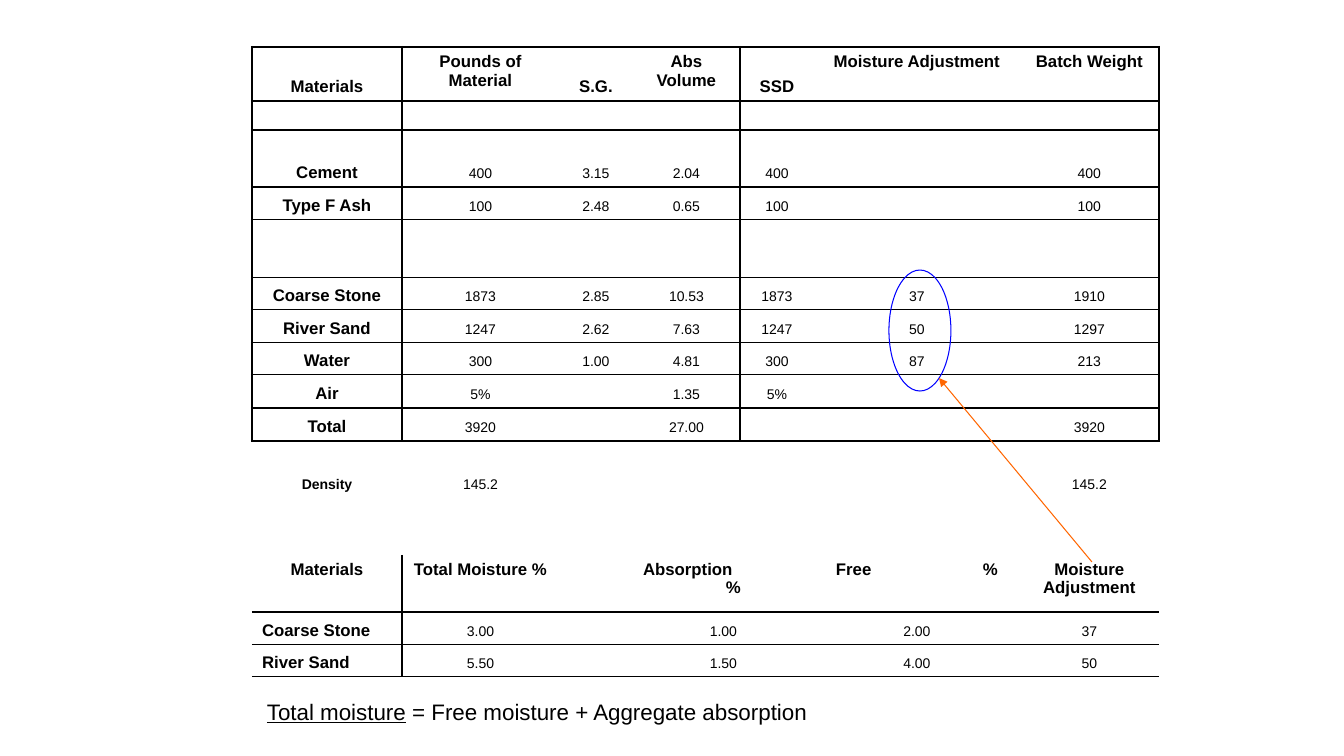
import pptx
import pptx.dml.color
import pptx.enum.shapes
import pptx.enum.text
import pptx.oxml.ns
import pptx.util
from lxml import etree

ROWS = [  # height in px, then the seven cells
    (54, ["Materials", "Pounds of Material", "S.G.", "Abs Volume", "SSD",
          "Moisture Adjustment", "Batch Weight"]),
    (29, [""] * 7),
    (57, ["Cement", "400", "3.15", "2.04", "400", "", "400"]),
    (33, ["Type F Ash", "100", "2.48", "0.65", "100", "", "100"]),
    (58, [""] * 7),
    (32, ["Coarse Stone", "1873", "2.85", "10.53", "1873", "37", "1910"]),
    (33, ["River Sand", "1247", "2.62", "7.63", "1247", "50", "1297"]),
    (32, ["Water", "300", "1.00", "4.81", "300", "87", "213"]),
    (33, ["Air", "5%", "", "1.35", "5%", "", ""]),
    (33, ["Total", "3920", "", "27.00", "", "", "3920"]),
    (57, ["Density", "145.2", "", "", "", "", "145.2"]),
    (57, [""] * 7),
    (57, ["Materials", "Total Moisture %", "", "Absorption\n\t%", "", "\tFree\t%",
          "Moisture Adjustment"]),
    (33, ["Coarse Stone", "3.00", "", "1.00", "", "2.00", "37"]),
    (32, ["River Sand", "5.50", "", "1.50", "", "4.00", "50"]),
]
COLUMN_WIDTHS = [150, 157, 74, 107, 74, 206, 139]
TABLE_LEFT, TABLE_TOP = 252, 47
BATCH_HEADER, TOTAL, DENSITY, MOISTURE_HEADER = 0, 9, 10, 12
TOP_ALIGNED_BATCH_HEADERS = {1, 3, 5, 6}
TAB_STOPS = {3: [83], 5: [12, 159]}  # column of the moisture header: px

# Line weights in points at each row boundary, top to bottom
ROW_RULES = [2, 2, 1, 1, 1, 1, 1, 1, 1, 2, 2, 0, 0, 2, 1, 1]
BATCH_COLUMN_RULES = {0, 1, 4, 7}
MOISTURE_COLUMN_RULES = {1}
COLUMN_RULE = 2

FORMULA = [("Total moisture", True), (" = Free moisture + Aggregate absorption", False)]
FORMULA_BOX = (257, 693, 789, 37)
ADJUSTMENT_RING = (889, 270, 62, 121)
ARROW = (1092, 562, 939, 378)

BLACK = pptx.dml.color.RGBColor(0, 0, 0)
BLUE = pptx.dml.color.RGBColor(0, 0, 255)
ORANGE = pptx.dml.color.RGBColor(255, 102, 0)
FONT = "Arial"
PX_PER_INCH = 100.8
qn = pptx.oxml.ns.qn


def px(length):
    return pptx.util.Emu(round(length * 914400 / PX_PER_INCH))


def add_run(paragraph, text, size, bold=False, underline=False):
    run = paragraph.add_run()
    run.text = text
    font = run.font
    font.name, font.size, font.bold = FONT, pptx.util.Pt(size), bold
    font.underline = underline
    font.color.rgb = BLACK


def column_rule(row, boundary):
    if row <= TOTAL:
        ruled = BATCH_COLUMN_RULES
    elif row >= MOISTURE_HEADER:
        ruled = MOISTURE_COLUMN_RULES
    else:
        ruled = set()
    return COLUMN_RULE if boundary in ruled else 0


def set_borders(cell, row, col):
    properties = cell._tc.get_or_add_tcPr()
    weights = {"a:lnL": column_rule(row, col), "a:lnR": column_rule(row, col + 1),
               "a:lnT": ROW_RULES[row], "a:lnB": ROW_RULES[row + 1]}
    for tag, weight in weights.items():
        line = etree.SubElement(properties, qn(tag), w=str(pptx.util.Pt(weight)))
        if weight:
            fill = etree.SubElement(line, qn("a:solidFill"))
            etree.SubElement(fill, qn("a:srgbClr"), val=str(BLACK))
        else:
            etree.SubElement(line, qn("a:noFill"))
    cell.fill.background()


def fill_cell(cell, row, col, text):
    align = pptx.enum.text.PP_ALIGN
    anchor = pptx.enum.text.MSO_ANCHOR
    header = row in (BATCH_HEADER, MOISTURE_HEADER)
    at_top = row == MOISTURE_HEADER or (
        row == BATCH_HEADER and col in TOP_ALIGNED_BATCH_HEADERS)
    cell.vertical_anchor = anchor.TOP if at_top else anchor.BOTTOM
    paragraph = cell.text_frame.paragraphs[0]
    if not text:
        etree.SubElement(paragraph._p, qn("a:endParaRPr"), sz="1000")
        return
    stops = TAB_STOPS.get(col, []) if row == MOISTURE_HEADER else []
    aligned_left = stops or (row > MOISTURE_HEADER and col == 0)
    paragraph.alignment = align.LEFT if aligned_left else align.CENTER
    if stops:
        tabs = etree.SubElement(paragraph._p.get_or_add_pPr(), qn("a:tabLst"))
        for stop in stops:
            etree.SubElement(tabs, qn("a:tab"), pos=str(px(stop)), algn="l")
    bold = header or col == 0
    size = 12 if bold and row != DENSITY else 10
    for index, line in enumerate(text.split("\n")):
        if index:
            paragraph.add_line_break()
        add_run(paragraph, line, size, bold)


def add_mix_table(slide):
    frame = slide.shapes.add_table(
        len(ROWS), len(COLUMN_WIDTHS), px(TABLE_LEFT), px(TABLE_TOP),
        px(sum(COLUMN_WIDTHS)), px(sum(height for height, _ in ROWS)))
    table = frame.table
    table.first_row = table.horz_banding = False
    for column, width in zip(table.columns, COLUMN_WIDTHS):
        column.width = px(width)
    for row, (height, texts) in enumerate(ROWS):
        table.rows[row].height = px(height)
        for col, text in enumerate(texts):
            cell = table.cell(row, col)
            fill_cell(cell, row, col, text)
            set_borders(cell, row, col)
        if row >= MOISTURE_HEADER:
            table.cell(row, 3).merge(table.cell(row, 4))


def add_formula(slide):
    frame = slide.shapes.add_textbox(*map(px, FORMULA_BOX)).text_frame
    frame.word_wrap = True
    frame.auto_size = pptx.enum.text.MSO_AUTO_SIZE.SHAPE_TO_FIT_TEXT
    for text, underline in FORMULA:
        add_run(frame.paragraphs[0], text, 16, underline=underline)


def add_adjustment_callout(slide):
    """Ring the moisture adjustments and point to them from the lower table."""
    ring = slide.shapes.add_shape(
        pptx.enum.shapes.MSO_SHAPE.OVAL, *map(px, ADJUSTMENT_RING))
    ring.shadow.inherit = False
    ring.fill.background()
    arrow = slide.shapes.add_connector(
        pptx.enum.shapes.MSO_CONNECTOR.STRAIGHT, *map(px, ARROW))
    for shape, color in ((ring, BLUE), (arrow, ORANGE)):
        shape.line.color.rgb = color
        shape.line.width = pptx.util.Pt(0.75)
    etree.SubElement(arrow.line._get_or_add_ln(), qn("a:tailEnd"), type="triangle")
    etree.SubElement(arrow._element.spPr, qn("a:effectLst"))


def main():
    deck = pptx.Presentation()
    deck.slide_width, deck.slide_height = px(1344), px(756)
    slide = deck.slides.add_slide(deck.slide_layouts[6])
    add_formula(slide)
    add_mix_table(slide)
    add_adjustment_callout(slide)
    deck.save("out.pptx")


if __name__ == "__main__":
    main()
